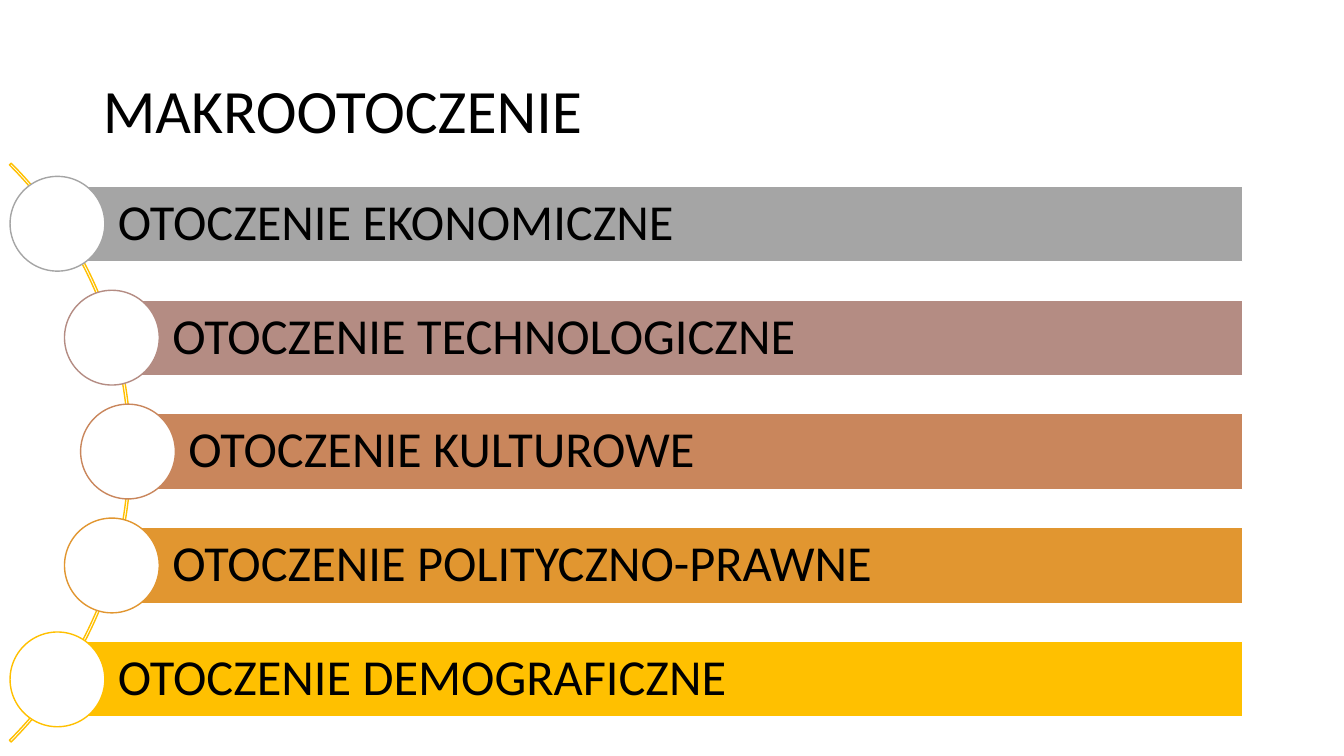
from pptx import Presentation
from pptx.dml.color import RGBColor
from pptx.enum.shapes import MSO_SHAPE
from pptx.enum.text import MSO_ANCHOR, PP_ALIGN
from pptx.util import Inches, Pt


def paint(code):
    """Turn a hex string into a colour."""
    return RGBColor.from_string(code)


def apply(item, values):
    """Set each attribute in a dict of format values."""
    for name, value in values.items():
        setattr(item, name, value)


class Deck:
    """Hold the style and the current slide."""

    font = "Calibri"
    ink = "000000"
    paper = "FFFFFF"

    def __init__(self):
        """Open a wide deck with one title slide."""
        self.deck = Presentation()
        apply(self.deck, {"slide_width": Inches(13.333), "slide_height": Inches(7.5)})
        self.slide = self.deck.slides.add_slide(self.deck.slide_layouts[5])

    def label(self, shape, text, size, inset=0.1):
        """Put one left-aligned line of text in a shape."""
        frame = shape.text_frame
        frame.text = text
        apply(frame, {"word_wrap": True, "vertical_anchor": MSO_ANCHOR.MIDDLE,
                      "margin_left": Inches(inset), "margin_right": Inches(0.1)})
        line = frame.paragraphs[0]
        apply(line, {"alignment": PP_ALIGN.LEFT, "line_spacing": 0.9})
        apply(line.font, {"name": self.font, "size": Pt(size)})
        line.font.color.rgb = paint(self.ink)

    def title(self, text, left, top, width, height):
        """Place and fill the title."""
        shape = self.slide.shapes.title
        apply(shape, {"left": Inches(left), "top": Inches(top),
                      "width": Inches(width), "height": Inches(height)})
        self.label(shape, text, 44)

    def shape(self, kind, left, top, width, height, line, fill=None):
        """Draw a preset shape with a thin outline."""
        shape = self.slide.shapes.add_shape(
            kind, Inches(left), Inches(top), Inches(width), Inches(height))
        shape.shadow.inherit = False
        if fill:
            shape.fill.solid()
            shape.fill.fore_color.rgb = paint(fill)
        else:
            shape.fill.background()
        shape.line.color.rgb = paint(line)
        shape.line.width = Pt(1)
        return shape

    def arc(self, left, top, size, color):
        """Draw the thin curve that links the circles."""
        shape = self.shape(MSO_SHAPE.BLOCK_ARC, left, top, size, size, color)
        for index, value in enumerate((189, 27, 0.003)):
            shape.adjustments[index] = value

    def bar(self, text, left, mid, color):
        """Draw a labelled bar with a circle centred on its left end."""
        right, height, size = 12.33, 0.75, 0.94
        bar = self.shape(MSO_SHAPE.RECTANGLE, left, mid - height / 2,
                         right - left, height, self.paper, color)
        self.label(bar, text, 36, 0.6)
        self.shape(MSO_SHAPE.OVAL, left - size / 2, mid - size / 2,
                   size, size, color, self.paper)


def main():
    """Build and save the slide."""
    deck = Deck()
    deck.title("MAKROOTOCZENIE", 0.92, 0.4, 11.5, 1.45)
    deck.arc(-6.82, 0.43, 8.12, "FFC000")
    rows = [
        ("OTOCZENIE EKONOMICZNE", 0.57, "A5A5A5"),
        ("OTOCZENIE TECHNOLOGICZNE", 1.11, "B48C83"),
        ("OTOCZENIE KULTUROWE", 1.27, "C9865C"),
        ("OTOCZENIE POLITYCZNO-PRAWNE", 1.11, "E19630"),
        ("OTOCZENIE DEMOGRAFICZNE", 0.57, "FFC000"),
    ]
    for index, (text, left, color) in enumerate(rows):
        deck.bar(text, left, 2.22 + 1.13 * index, color)
    deck.deck.save("out.pptx")


if __name__ == "__main__":
    main()
